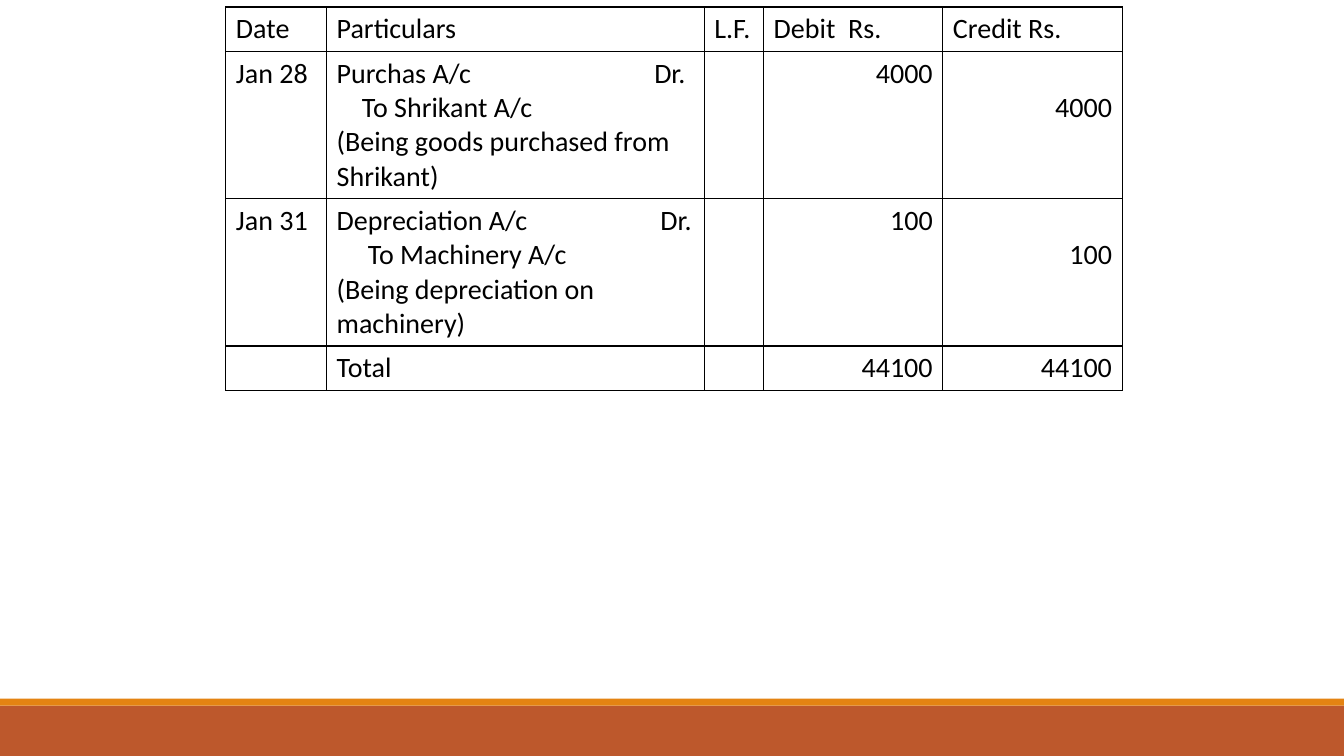
from lxml import etree
from pptx import Presentation
from pptx import util as u
from pptx.dml.color import RGBColor
from pptx.enum import shapes, text
from pptx.oxml.ns import qn

WIDE, HIGH = 13.33, 7.5
HUES = {"ink": "000000", "paper": "FFFFFF", "rust": "BD582C", "amber": "E48312"}
COLS = [1, 3.75, 0.59, 1.78, 1.78]
LINE = 0.34  # height of one line of text
PAD = 0.05  # margin above and below the text of a cell
HEAD = ["Date", "Particulars", "L.F.", "Debit  Rs.", "Credit Rs."]
TOTAL = ["", "Total", "", "44100", "44100"]
# date, debited account, place of "Dr.", credited account, its indent, reason, amount
ITEMS = [
    ("Jan 28", "Purchas A/c", 3.15, "To Shrikant A/c", 0.25,
     "(Being goods purchased from Shrikant)", "4000"),
    ("Jan 31", "Depreciation A/c", 3.21, "To Machinery A/c", 0.31,
     "(Being depreciation on machinery)", "100"),
]


def rgb(name):
    return RGBColor.from_string(HUES[name])


def add_bar(slide, box, hue):
    bar = slide.shapes.add_shape(
        shapes.MSO_SHAPE.RECTANGLE, *[u.Inches(n) for n in box])
    bar.shadow.inherit = False
    bar.fill.solid()
    bar.fill.fore_color.rgb = rgb(hue)
    bar.line.fill.background()


def add_foot(slide, box):
    """Draw the footer band with a thin stripe along its top."""
    left, top, wide, high = box
    thin = high / 8
    add_bar(slide, (left, top + thin, wide, high - thin), "rust")
    add_bar(slide, (left, top, wide, thin), "amber")


def add_rule(cell):
    """Put a thin line on all four sides of a cell."""
    props = cell._tc.get_or_add_tcPr()
    for spot, side in enumerate(("lnL", "lnR", "lnT", "lnB")):
        line = etree.Element(qn("a:" + side), w=str(u.Pt(1)))
        fill = etree.SubElement(line, qn("a:solidFill"))
        etree.SubElement(fill, qn("a:srgbClr"), val=HUES["ink"])
        props.insert(spot, line)


def set_cell(cell, words, right=False):
    cell.text = words
    cell.margin_top = cell.margin_bottom = u.Inches(PAD)
    cell.fill.solid()
    cell.fill.fore_color.rgb = rgb("paper")
    add_rule(cell)
    for para in cell.text_frame.paragraphs:
        para.font.size = u.Pt(20)
        para.font.name = "Calibri"
        para.font.color.rgb = rgb("ink")
        if right:
            para.alignment = text.PP_ALIGN.RIGHT


def set_entry(cell, stop, indent):
    """Place the "Dr." mark and indent the credited account."""
    first, second = cell.text_frame.paragraphs[:2]
    tabs = etree.Element(qn("a:tabLst"))
    etree.SubElement(tabs, qn("a:tab"), pos=str(u.Inches(stop)), algn="l")
    first._p.get_or_add_pPr().insert(0, tabs)
    props = second._p.get_or_add_pPr()
    props.set("marL", str(u.Inches(indent)))
    props.set("indent", "0")


def add_journal(slide, box):
    rows = [HEAD]
    for date, debit, _, credit, _, why, sum_ in ITEMS:
        rows.append([date, f"{debit}\tDr.\n{credit}\n{why}", "", sum_, sum_])
    rows.append(TOTAL)
    frame = slide.shapes.add_table(
        len(rows), len(COLS), *[u.Inches(n) for n in box])
    table = frame.table
    table.first_row = table.horz_banding = False
    for col, share in zip(table.columns, COLS):
        col.width = u.Inches(box[2] * share / sum(COLS))
    for r, row in enumerate(rows):
        lines = 4 if 0 < r <= len(ITEMS) else 1
        table.rows[r].height = u.Inches(lines * LINE + 2 * PAD)
        for c, words in enumerate(row):
            set_cell(table.cell(r, c), words, right=r > 0 and c > 2)
    for r, item in enumerate(ITEMS, 1):
        set_entry(table.cell(r, 1), item[2], item[4])
        table.cell(r, 4).margin_top = u.Inches(PAD + LINE)


def main():
    deck = Presentation()
    deck.slide_width, deck.slide_height = u.Inches(WIDE), u.Inches(HIGH)
    slide = deck.slides.add_slide(deck.slide_layouts[6])
    add_foot(slide, (0, 6.93, WIDE, HIGH - 6.93))
    add_journal(slide, (2.24, 0.07, 8.89, 3.8))
    deck.save("out.pptx")


if __name__ == "__main__":
    main()
